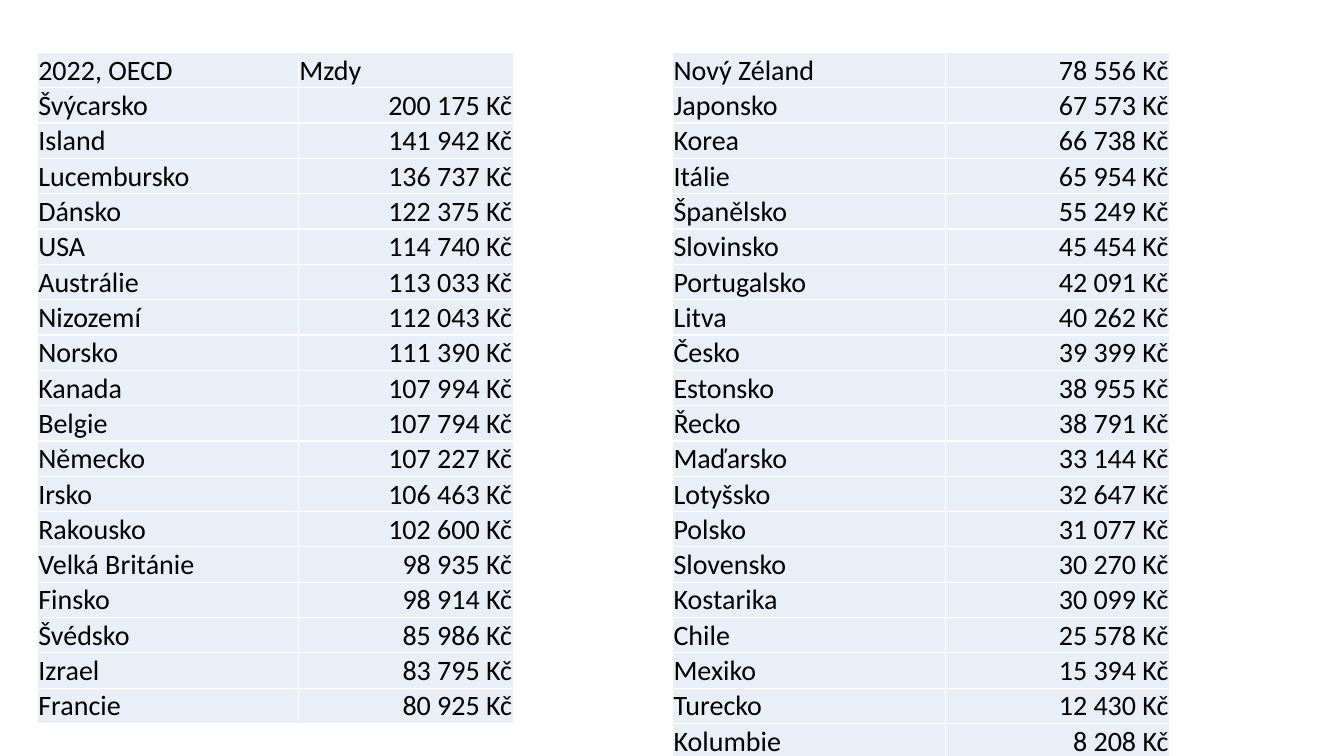
import dataclasses

import lxml.etree
import pptx
import pptx.dml.color
import pptx.enum.text
import pptx.oxml.ns
import pptx.util

HEADER = ("2022, OECD", "Mzdy")
HIGHER_WAGES = [
    ("Švýcarsko", "200 175 Kč"),
    ("Island", "141 942 Kč"),
    ("Lucembursko", "136 737 Kč"),
    ("Dánsko", "122 375 Kč"),
    ("USA", "114 740 Kč"),
    ("Austrálie", "113 033 Kč"),
    ("Nizozemí", "112 043 Kč"),
    ("Norsko", "111 390 Kč"),
    ("Kanada", "107 994 Kč"),
    ("Belgie", "107 794 Kč"),
    ("Německo", "107 227 Kč"),
    ("Irsko", "106 463 Kč"),
    ("Rakousko", "102 600 Kč"),
    ("Velká Británie", "98 935 Kč"),
    ("Finsko", "98 914 Kč"),
    ("Švédsko", "85 986 Kč"),
    ("Izrael", "83 795 Kč"),
    ("Francie", "80 925 Kč"),
]
LOWER_WAGES = [
    ("Nový Zéland", "78 556 Kč"),
    ("Japonsko", "67 573 Kč"),
    ("Korea", "66 738 Kč"),
    ("Itálie", "65 954 Kč"),
    ("Španělsko", "55 249 Kč"),
    ("Slovinsko", "45 454 Kč"),
    ("Portugalsko", "42 091 Kč"),
    ("Litva", "40 262 Kč"),
    ("Česko", "39 399 Kč"),
    ("Estonsko", "38 955 Kč"),
    ("Řecko", "38 791 Kč"),
    ("Maďarsko", "33 144 Kč"),
    ("Lotyšsko", "32 647 Kč"),
    ("Polsko", "31 077 Kč"),
    ("Slovensko", "30 270 Kč"),
    ("Kostarika", "30 099 Kč"),
    ("Chile", "25 578 Kč"),
    ("Mexiko", "15 394 Kč"),
    ("Turecko", "12 430 Kč"),
    ("Kolumbie", "8 208 Kč"),
]
TABLES = [
    {"rows": [HEADER] + HIGHER_WAGES, "left": 0.37, "columns": (2.59, 2.13), "row_height": 0.31},
    {"rows": LOWER_WAGES, "left": 6.67, "columns": (2.71, 2.22), "row_height": 0.29},
]
TABLE_TOP = 0.52
CELL_INSET = 0.01


@dataclasses.dataclass(frozen=True)
class Theme:
    font: str = "Calibri"
    size: int = 20
    text: str = "000000"
    fill: str = "EAEFF7"
    border: str = "FFFFFF"
    border_width: int = 1


THEME = Theme()


def add_borders(cell):
    properties = cell._tc.get_or_add_tcPr()
    qualified = pptx.oxml.ns.qn
    for position, side in enumerate(("a:lnL", "a:lnR", "a:lnT", "a:lnB")):
        line = lxml.etree.Element(qualified(side), w=str(pptx.util.Pt(THEME.border_width)))
        solid = lxml.etree.SubElement(line, qualified("a:solidFill"))
        lxml.etree.SubElement(solid, qualified("a:srgbClr"), val=THEME.border)
        properties.insert(position, line)


def fill_cell(cell, text, is_header, is_amount):
    anchor = pptx.enum.text.MSO_ANCHOR
    cell.vertical_anchor = anchor.BOTTOM if is_header else anchor.MIDDLE
    cell.margin_left = cell.margin_right = cell.margin_top = pptx.util.Inches(CELL_INSET)
    cell.margin_bottom = 0
    cell.fill.solid()
    cell.fill.fore_color.rgb = pptx.dml.color.RGBColor.from_string(THEME.fill)
    add_borders(cell)
    paragraph = cell.text_frame.paragraphs[0]
    if is_amount and not is_header:
        paragraph.alignment = pptx.enum.text.PP_ALIGN.RIGHT
    run = paragraph.add_run()
    run.text = text
    run.font.name = THEME.font
    run.font.size = pptx.util.Pt(THEME.size)
    run.font.bold = False
    run.font.color.rgb = pptx.dml.color.RGBColor.from_string(THEME.text)


def add_wage_table(slide, rows, left, columns, row_height):
    shape = slide.shapes.add_table(
        len(rows), len(columns),
        pptx.util.Inches(left), pptx.util.Inches(TABLE_TOP),
        pptx.util.Inches(sum(columns)), pptx.util.Inches(row_height * len(rows)),
    )
    table = shape.table
    table.first_row = False
    table.horz_banding = False
    for column, width in zip(table.columns, columns):
        column.width = pptx.util.Inches(width)
    for row_index, row in enumerate(rows):
        for column_index, text in enumerate(row):
            cell = table.cell(row_index, column_index)
            fill_cell(cell, text, row is HEADER, column_index == 1)


def main():
    presentation = pptx.Presentation()
    presentation.slide_width = pptx.util.Inches(13.33)
    presentation.slide_height = pptx.util.Inches(7.5)
    slide = presentation.slides.add_slide(presentation.slide_layouts[6])
    for wage_table in TABLES:
        add_wage_table(slide, **wage_table)
    presentation.save("out.pptx")


if __name__ == "__main__":
    main()
